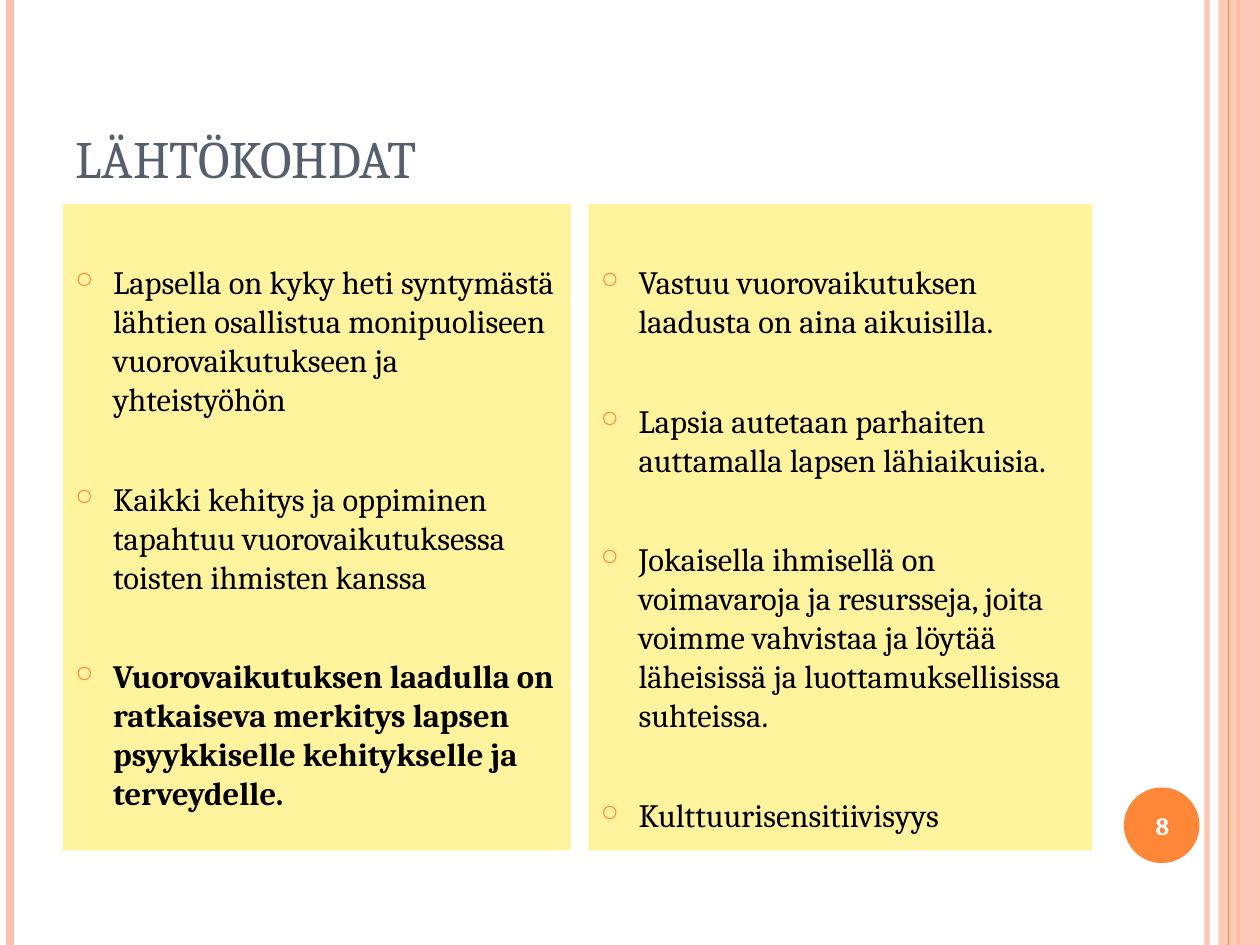
from dataclasses import dataclass

from lxml import etree
from pptx import Presentation
from pptx.dml.color import RGBColor
from pptx.enum.shapes import MSO_CONNECTOR, MSO_SHAPE
from pptx.enum.text import MSO_ANCHOR, PP_ALIGN
from pptx.oxml.ns import qn
from pptx.util import Inches, Pt

RECTANGLE, OVAL = MSO_SHAPE.RECTANGLE, MSO_SHAPE.OVAL
STRAIGHT = MSO_CONNECTOR.STRAIGHT
TOP, MIDDLE, BOTTOM = MSO_ANCHOR.TOP, MSO_ANCHOR.MIDDLE, MSO_ANCHOR.BOTTOM
LEFT, CENTER = PP_ALIGN.LEFT, PP_ALIGN.CENTER

WIDTH, HEIGHT = 10, 7.5
ORANGE, PEACH, YELLOW = "FE8637", "FEC3AE", "FFF39D"
SLATE, BLACK, WHITE = "575F6D", "000000", "FFFFFF"
FONT = "Cambria"
LEFT_MARGIN, CONTENT_WIDTH = 0.5, 8.17
PANEL_TOP, PANEL_HEIGHT = 1.62, 5.13
BULLET_INDENT = 0.3


@dataclass
class Stripe:
    x: float
    weight: float
    color: str
    opacity: int = 100


@dataclass
class Item:
    text: str
    bold: bool = False


@dataclass
class Panel:
    left: float
    width: float
    items: list[Item]


STRIPES_BEHIND = [
    Stripe(9.58, 3, PEACH, 93),
    Stripe(0.08, 4.5, PEACH),
    Stripe(9.83, 1.5, ORANGE),
]
STRIPE_IN_FRONT = Stripe(9.75, 0.75, ORANGE)

PANELS = [
    Panel(LEFT_MARGIN, 4.03, [
        Item("Lapsella on kyky heti syntymästä lähtien osallistua "
             "monipuoliseen vuorovaikutukseen ja yhteistyöhön"),
        Item("Kaikki kehitys ja oppiminen tapahtuu vuorovaikutuksessa "
             "toisten ihmisten kanssa"),
        Item("Vuorovaikutuksen laadulla on ratkaiseva merkitys lapsen "
             "psyykkiselle kehitykselle ja terveydelle.", bold=True),
    ]),
    Panel(4.67, 4, [
        Item("Vastuu vuorovaikutuksen laadusta on aina aikuisilla."),
        Item("Lapsia autetaan parhaiten auttamalla lapsen lähiaikuisia."),
        Item("Jokaisella ihmisellä on voimavaroja ja resursseja, joita voimme "
             "vahvistaa ja löytää läheisissä ja luottamuksellisissa suhteissa."),
        Item("Kulttuurisensitiivisyys"),
    ]),
]


def rgb(color: str) -> RGBColor:
    return RGBColor.from_string(color)


def set_opacity(element, percent: int) -> None:
    color = next(element.iter(qn("a:srgbClr")))
    etree.SubElement(color, qn("a:alpha"), val=str(percent * 1000))


def set_format(target, values: dict) -> None:
    for name, value in values.items():
        setattr(target, name, value)


def add_stripe(page, stripe: Stripe) -> None:
    x = Inches(stripe.x)
    line = page.shapes.add_connector(STRAIGHT, x, 0, x, Inches(HEIGHT))
    line.line.color.rgb = rgb(stripe.color)
    line.line.width = Pt(stripe.weight)
    properties = line._element.spPr
    if stripe.opacity < 100:
        set_opacity(properties, stripe.opacity)
    etree.SubElement(properties, qn("a:effectLst"))


def add_filled(page, kind, bounds: tuple, color: str):
    shape = page.shapes.add_shape(kind, *map(Inches, bounds))
    shape.shadow.inherit = False
    shape.fill.solid()
    shape.fill.fore_color.rgb = rgb(color)
    shape.line.fill.background()
    return shape


def add_span(para, text: str, size: float, color: str, bold: bool = False):
    span = para.add_run()
    span.text = text
    set_format(span.font, {"name": FONT, "size": Pt(size), "bold": bold})
    span.font.color.rgb = rgb(color)
    return span


def add_label(page, bounds: tuple, anchor, align, text: str,
              size: float, color: str, bold: bool = False):
    box = page.shapes.add_textbox(*map(Inches, bounds))
    set_format(box.text_frame, {"word_wrap": True, "vertical_anchor": anchor})
    para = box.text_frame.paragraphs[0]
    para.alignment = align
    return add_span(para, text, size, color, bold)


def add_bullet(para) -> None:
    indent = Inches(BULLET_INDENT)
    properties = para._p.get_or_add_pPr()
    properties.set("marL", str(indent))
    properties.set("indent", str(-indent))
    color = etree.SubElement(properties, qn("a:buClr"))
    etree.SubElement(color, qn("a:srgbClr"), val=ORANGE)
    etree.SubElement(properties, qn("a:buSzPct"), val="70000")
    etree.SubElement(properties, qn("a:buChar"), char="○")


def add_panel(page, panel: Panel) -> None:
    bounds = (panel.left, PANEL_TOP, panel.width, PANEL_HEIGHT)
    frame = add_filled(page, RECTANGLE, bounds, YELLOW).text_frame
    set_format(frame, {"word_wrap": True, "vertical_anchor": TOP,
                       "margin_top": Inches(0.46)})
    for index, item in enumerate(panel.items):
        para = frame.add_paragraph() if index else frame.paragraphs[0]
        set_format(para, {"alignment": LEFT, "line_spacing": Pt(22.3),
                          "space_before": Pt(34.5 if index else 0)})
        add_bullet(para)
        add_span(para, item.text, 18.6, BLACK, item.bold)


def main() -> None:
    deck = Presentation()
    set_format(deck, {"slide_width": Inches(WIDTH),
                      "slide_height": Inches(HEIGHT)})
    page = deck.slides.add_slide(deck.slide_layouts[6])

    for stripe in STRIPES_BEHIND:
        add_stripe(page, stripe)
    band = add_filled(page, RECTANGLE, (9.67, 0, 0.33, HEIGHT), PEACH)
    set_opacity(band._element.spPr, 87)
    add_stripe(page, STRIPE_IN_FRONT)
    add_filled(page, OVAL, (8.92, 6.25, 0.6, 0.6), ORANGE)

    title = add_label(page, (LEFT_MARGIN, 0.3, CONTENT_WIDTH, 1.25),
                      BOTTOM, LEFT, "LÄHTÖKOHDAT", 30, SLATE)
    title.font._element.set("cap", "small")
    add_label(page, (8.89, 6.27, 0.67, 0.57), MIDDLE, CENTER,
              "8", 14, WHITE, bold=True)
    for panel in PANELS:
        add_panel(page, panel)

    deck.save("out.pptx")


if __name__ == "__main__":
    main()
